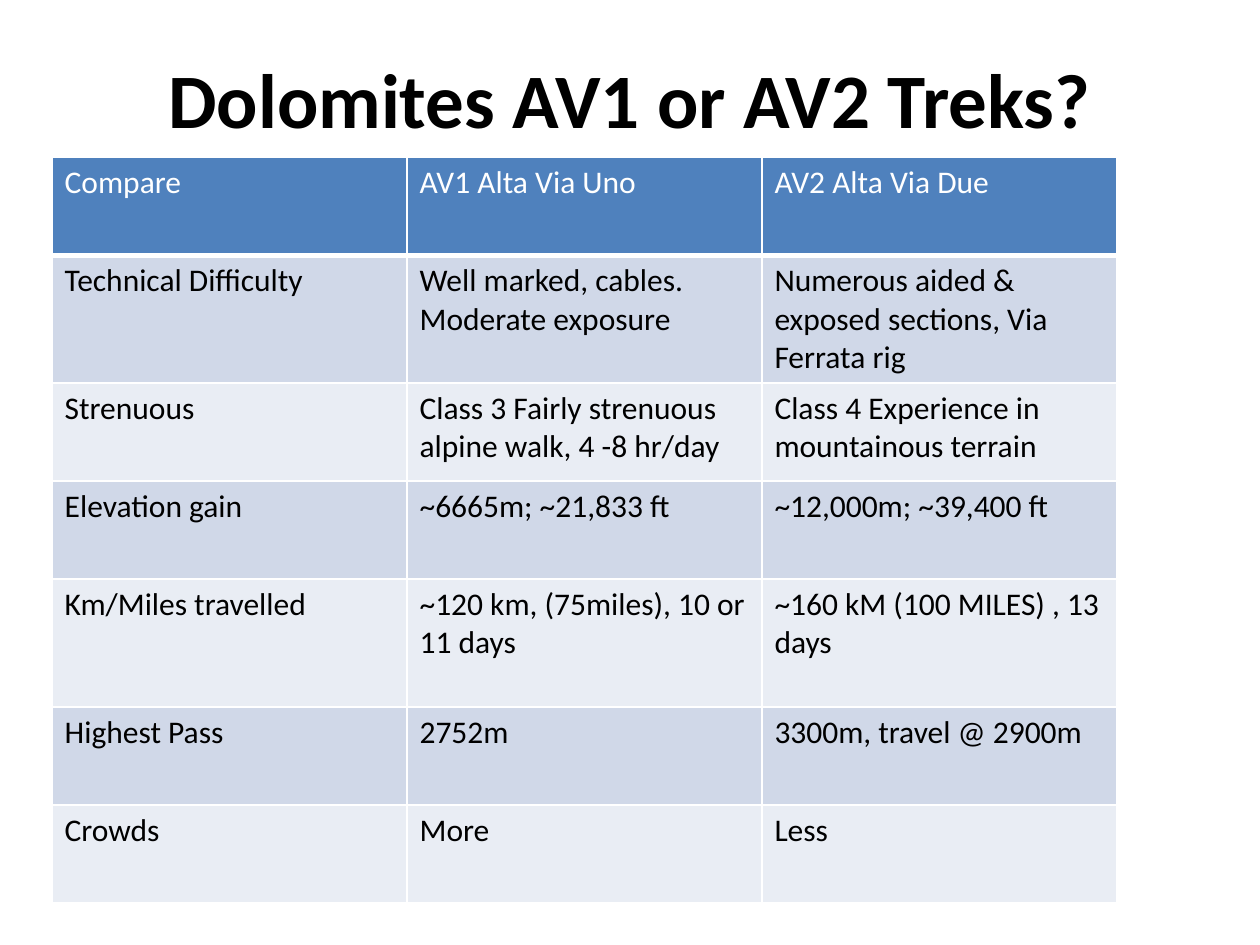
from dataclasses import dataclass

from lxml import etree
from pptx import Presentation
from pptx.dml.color import RGBColor
from pptx.enum import text
from pptx.oxml import ns
from pptx.util import Pt


@dataclass(frozen=True)
class Theme:
    font: str = "Calibri"
    title_size: int = 44
    body_size: int = 18
    ink: str = "000000"
    white: str = "FFFFFF"
    header: str = "4F81BD"
    bands: tuple = ("D0D8E8", "E9EDF4")


THEME = Theme()

ROWS = [
    ("Compare", "AV1 Alta Via Uno", "AV2 Alta Via Due"),
    ("Technical Difficulty", "Well marked, cables. Moderate exposure",
     "Numerous aided & exposed sections, Via Ferrata rig"),
    ("Strenuous", "Class 3 Fairly strenuous alpine walk, 4 -8 hr/day",
     "Class 4 Experience in mountainous terrain"),
    ("Elevation gain", "~6665m; ~21,833 ft", "~12,000m; ~39,400 ft"),
    ("Km/Miles travelled", "~120 km, (75miles), 10 or 11 days",
     "~160 kM (100 MILES) , 13 days"),
    ("Highest Pass", "2752m", "3300m, travel @ 2900m"),
    ("Crowds", "More", "Less"),
]
ROW_HEIGHT, TALL_HEIGHT = 56, 73
TALL_ROWS = (1, 4)
COL_WIDTH = 202.8


def write(tf, content, *, size=THEME.body_size, color=THEME.ink, bold=False,
          align=text.PP_ALIGN.LEFT):
    tf.word_wrap = True
    p = tf.paragraphs[0]
    p.alignment = align
    r = p.add_run()
    r.text = content
    r.font.name = THEME.font
    r.font.size = Pt(size)
    r.font.bold = bold
    r.font.color.rgb = RGBColor.from_string(color)


def add_title(s, content):
    sp = s.shapes.add_textbox(Pt(36), Pt(21.6), Pt(648), Pt(68.4))
    sp.text_frame.vertical_anchor = text.MSO_ANCHOR.MIDDLE
    write(sp.text_frame, content, size=THEME.title_size, bold=True,
          align=text.PP_ALIGN.CENTER)


def set_borders(cell, color, bottom=1):
    tc_pr = cell._tc.get_or_add_tcPr()
    widths = {"a:lnL": 1, "a:lnR": 1, "a:lnT": 1, "a:lnB": bottom}
    for i, (tag, width) in enumerate(widths.items()):
        ln = etree.Element(ns.qn(tag), w=str(Pt(width)))
        fill = etree.SubElement(ln, ns.qn("a:solidFill"))
        etree.SubElement(fill, ns.qn("a:srgbClr"), val=color)
        tc_pr.insert(i, ln)


def format_cell(cell, content, row):
    is_header = row == 0
    fill = THEME.header if is_header else THEME.bands[(row - 1) % 2]
    write(cell.text_frame, content, color=THEME.white if is_header else THEME.ink)
    cell.fill.solid()
    cell.fill.fore_color.rgb = RGBColor.from_string(fill)
    set_borders(cell, THEME.white, bottom=3 if is_header else 1)


def add_comparison(s, rows):
    heights = [TALL_HEIGHT if i in TALL_ROWS else ROW_HEIGHT for i in range(len(rows))]
    n_cols = len(rows[0])
    table = s.shapes.add_table(len(rows), n_cols, Pt(29.8), Pt(90),
                               Pt(COL_WIDTH * n_cols), Pt(sum(heights))).table
    for col in table.columns:
        col.width = Pt(COL_WIDTH)
    for i, (values, height) in enumerate(zip(rows, heights)):
        table.rows[i].height = Pt(height)
        for j, value in enumerate(values):
            format_cell(table.cell(i, j), value, i)


def main():
    prs = Presentation()
    prs.slide_width, prs.slide_height = Pt(720), Pt(540)
    s = prs.slides.add_slide(prs.slide_layouts[6])
    add_title(s, "Dolomites AV1 or AV2 Treks?")
    add_comparison(s, ROWS)
    prs.save("out.pptx")


if __name__ == "__main__":
    main()
